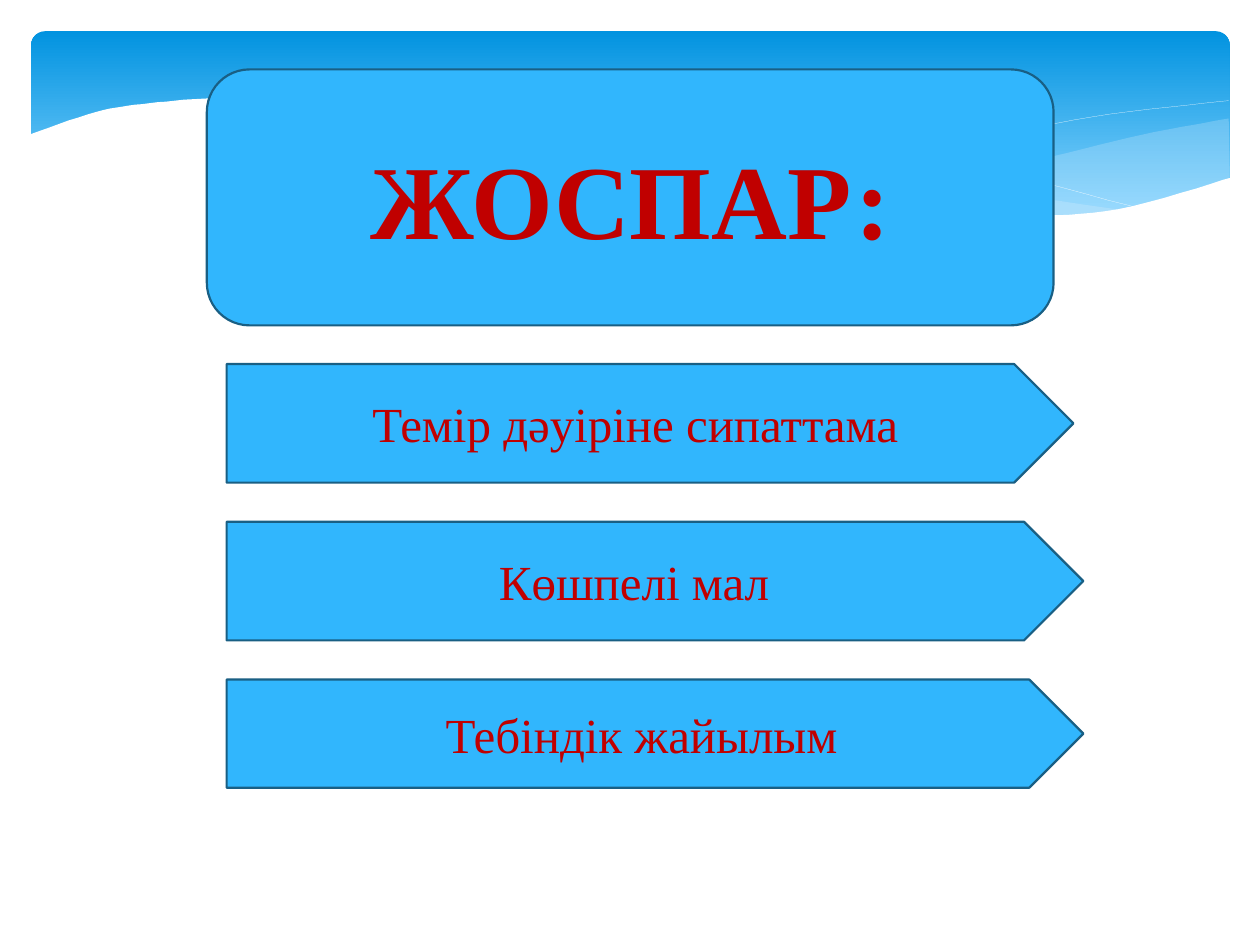
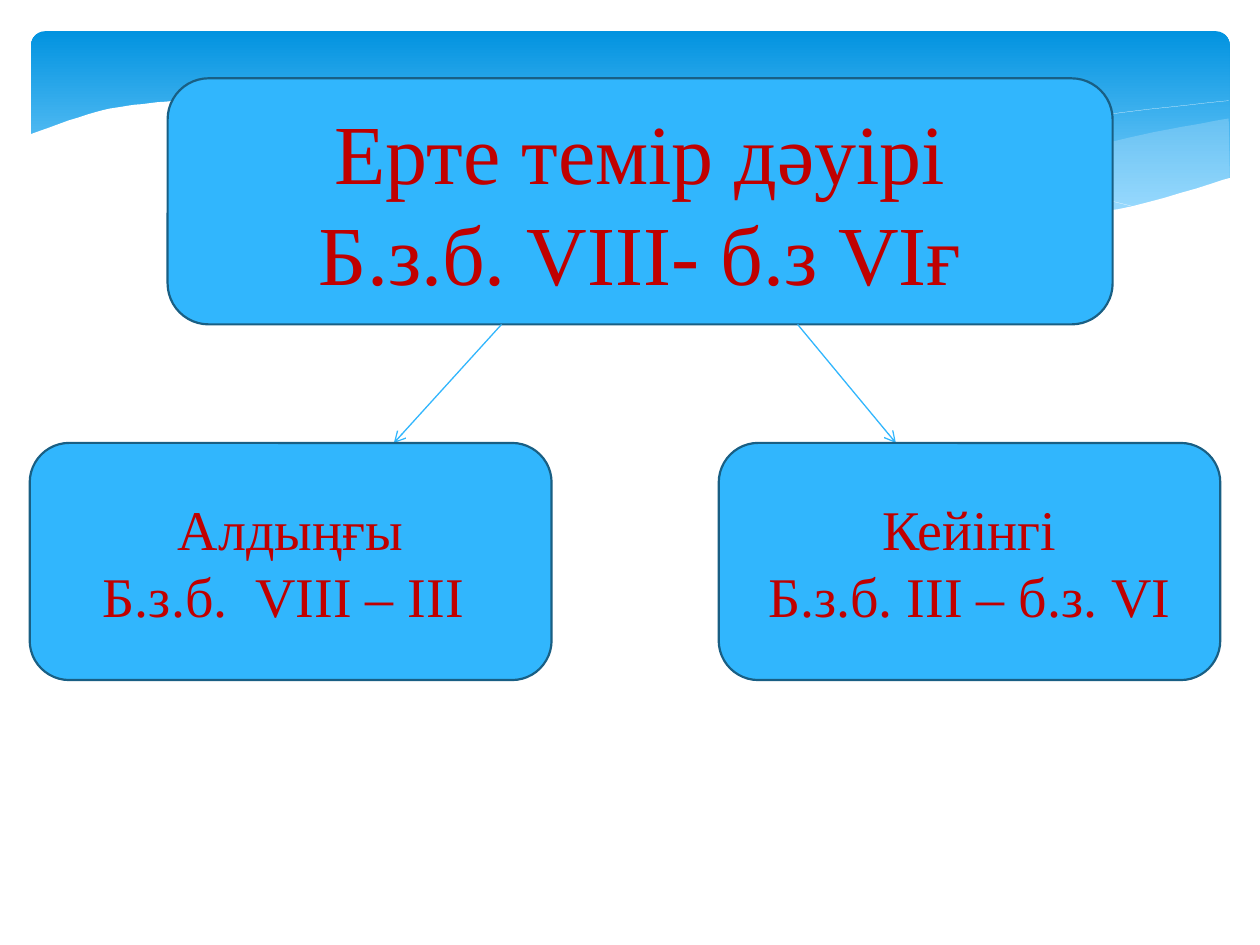
import dataclasses
import typing

import pptx
import pptx.dml.color
import pptx.enum.shapes
import pptx.enum.text
import pptx.oxml.ns
import pptx.util
from lxml import etree

Cm = pptx.util.Cm
Pt = pptx.util.Pt
Shape = pptx.enum.shapes.MSO_SHAPE


@dataclasses.dataclass(frozen=True)
class Theme:
    font: str = "Times New Roman"
    text: str = "C00000"
    box: str = "31B6FD"
    outline: str = "195F84"
    band_top: str = "0293E0"
    band_bottom: str = "83D3FE"
    wave: str = "C6E7FC"
    paper: str = "FFFFFF"
    plan_title_size: int = 60
    era_title_size: int = 48
    period_size: int = 32
    topic_size: int = 28
    outline_width: float = 1.25
    arrow_width: float = 0.75
    hairline_width: float = 0.1


class Box(typing.NamedTuple):
    """A place on the page, in centimetres."""
    left: float
    top: float
    width: float
    height: float


class Topic(typing.NamedTuple):
    text: str
    width: float
    height: float


class Period(typing.NamedTuple):
    lines: list
    left: float
    width: float
    arrow_start: float
    arrow_end: float


class Curve(typing.NamedTuple):
    """Smooth edges joined end to end; without a fill, a thin line is drawn."""
    edges: list
    fill: typing.Optional[str] = None
    opacity: int = 100


THEME = Theme()

# Page 1: the plan
PLAN_TITLE = ["ЖОСПАР:"]
PLAN_TITLE_BOX = Box(4.17, 1.4, 17.07, 5.16)
TOPICS = [
    Topic("Темір дәуіріне сипаттама", 17.07, 2.39),
    Topic("Көшпелі мал ", 17.27, 2.39),
    Topic("Тебіндік жайылым", 17.27, 2.18),
]
TOPIC_LEFT, TOPIC_TOP, TOPIC_PITCH = 4.57, 7.34, 3.18

# Page 2: the era and its two periods
ERA_TITLE = ["Ерте темір дәуірі", "Б.з.б. VIII- б.з VIғ"]
ERA_TITLE_BOX = Box(3.38, 1.58, 19.05, 4.96)
PERIODS = [
    Period(["Алдыңғы", "Б.з.б.  VIII – III "], 0.6, 10.52, 10.11, 7.94),
    Period(["Кейінгі", "Б.з.б. III – б.з. VI"], 14.49, 10.11, 16.08, 18.06),
]
PERIOD_TOP, PERIOD_HEIGHT = 8.93, 4.78

# Header of both pages: a gradient band, waves over it and a paper-coloured lower edge.
# Each edge is a row of knots that a smooth curve passes through.
BAND = Box(0.63, 0.63, 24.16, 3.96)
SHORT_WAVE_TOP = [(24.77, 2.39), (23.01, 2.72), (20.45, 3.33), (16.79, 4.06)]
SHORT_WAVE_BOTTOM = [
    (16.79, 4.06), (18.92, 4.27), (20.68, 4.37),
    (22.15, 4.29), (23.75, 3.96), (24.79, 3.58),
]
LONG_WAVE_TOP = [
    (22.68, 4.24), (19.69, 3.78), (15.98, 2.95),
    (12.75, 2.29), (9.65, 2.03), (7.26, 2.18),
]
LONG_WAVE_BOTTOM = [
    (7.26, 2.18), (9.19, 2.46), (11.4, 2.95), (15.27, 3.81),
    (18.69, 4.29), (20.5, 4.39), (22.68, 4.24),
]
FALLING_LINE = [
    (7.85, 2.29), (9.22, 2.11), (11.43, 2.08), (13.54, 2.24),
    (16.15, 2.62), (19.3, 3.25), (23.04, 4.22),
]
RISING_LINE = [(15.57, 3.84), (19, 2.97), (22, 2.36), (24.77, 2.03)]
PAPER_TOP = [
    (24.82, 3.58), (22.53, 4.22), (20.55, 4.34), (17.98, 4.19),
    (14.71, 3.66), (11.35, 2.9), (8.64, 2.34), (6.35, 2.06),
    (4.5, 1.98), (3.02, 2.08), (1.93, 2.26), (0.58, 2.72),
]
PAPER_BOTTOM = [(0.58, 5.69), (24.82, 5.69)]
HEADER_CURVES = [
    Curve([SHORT_WAVE_TOP, SHORT_WAVE_BOTTOM], THEME.wave, 29),
    Curve([LONG_WAVE_TOP, LONG_WAVE_BOTTOM], THEME.wave, 40),
    Curve([FALLING_LINE]),
    Curve([RISING_LINE]),
    Curve([PAPER_TOP, PAPER_BOTTOM], THEME.paper),
]
STEPS_PER_KNOT = 8
UNITS_PER_CM = 100  # freeform points are whole numbers, so draw in 0.01 cm


def rgb(code):
    return pptx.dml.color.RGBColor.from_string(code)


def add_child(parent, tag, **attributes):
    return etree.SubElement(parent, pptx.oxml.ns.qn(tag), attributes)


def smooth(knots):
    """Return points of a Catmull-Rom curve through the knots."""
    padded = [knots[0], *knots, knots[-1]]
    points = []
    for before, start, end, after in zip(padded, padded[1:], padded[2:], padded[3:]):
        for step in range(STEPS_PER_KNOT):
            t = step / STEPS_PER_KNOT
            points.append(tuple(
                b + ((c - a) * t + (2 * a - 5 * b + 4 * c - d) * t**2
                     + (3 * b - a - 3 * c + d) * t**3) / 2
                for a, b, c, d in zip(before, start, end, after)))
    return points + [knots[-1]]


def draw_band(page):
    band = page.shapes.add_shape(Shape.ROUNDED_RECTANGLE, *map(Cm, BAND))
    band.adjustments[0] = 0.07
    band.shadow.inherit = False
    band.line.fill.background()
    band.fill.gradient()
    band.fill.gradient_angle = 270
    colours = (THEME.band_top, THEME.band_bottom)
    for stop, colour, position in zip(band.fill.gradient_stops, colours, (0, 0.9)):
        stop.color.rgb = rgb(colour)
        stop.position = position
    return band


def draw_curve(page, curve):
    points = [(x * UNITS_PER_CM, y * UNITS_PER_CM)
              for edge in curve.edges for x, y in smooth(edge)]
    builder = page.shapes.build_freeform(*points[0], scale=Cm(1) / UNITS_PER_CM)
    builder.add_line_segments(points[1:], close=curve.fill is not None)
    shape = builder.convert_to_shape()
    shape.shadow.inherit = False
    if curve.fill is None:
        shape.fill.background()
        shape.line.color.rgb = rgb(THEME.paper)
        shape.line.width = Pt(THEME.hairline_width)
    else:
        shape.line.fill.background()
        shape.fill.solid()
        shape.fill.fore_color.rgb = rgb(curve.fill)
        colour = shape.element.spPr.find(".//" + pptx.oxml.ns.qn("a:srgbClr"))
        add_child(colour, "a:alpha", val=str(curve.opacity * 1000))
    return shape


def send_to_back(shapes, tree):
    """Put the shapes, in order, behind all others of a page's or layout's tree."""
    first_position = 2  # after the tree's own two property elements
    for position, shape in enumerate(shapes, first_position):
        tree.insert(position, shape.element)


def share_header(page, layout):
    """Draw the header on a page, then move it to the layout for all pages."""
    header = [draw_band(page)] + [draw_curve(page, curve) for curve in HEADER_CURVES]
    for number, shape in enumerate(header, 100):
        shape.element.nvSpPr.cNvPr.set("id", str(number))
    send_to_back(header, layout.shapes.element)


def write(shape, lines, size, bold=False):
    frame = shape.text_frame
    frame.word_wrap = True
    frame.auto_size = pptx.enum.text.MSO_AUTO_SIZE.NONE
    frame.vertical_anchor = pptx.enum.text.MSO_ANCHOR.MIDDLE
    frame.text = "\n".join(lines)
    for para in frame.paragraphs:
        para.alignment = pptx.enum.text.PP_ALIGN.CENTER
        para.font.name = THEME.font
        para.font.size = Pt(size)
        para.font.bold = bold
        para.font.color.rgb = rgb(THEME.text)


def add_box(page, kind, box):
    shape = page.shapes.add_shape(kind, *map(Cm, box))
    shape.shadow.inherit = False
    shape.fill.solid()
    shape.fill.fore_color.rgb = rgb(THEME.box)
    shape.line.color.rgb = rgb(THEME.outline)
    shape.line.width = Pt(THEME.outline_width)
    return shape


def add_title(page, lines, box, size, bold=False):
    """Lay the title placeholder over a rounded panel of the same size."""
    panel = add_box(page, Shape.FLOWCHART_ALTERNATE_PROCESS, box)
    send_to_back([panel], page.shapes.element)
    title = page.shapes.title
    title.left, title.top, title.width, title.height = map(Cm, box)
    write(title, lines, size, bold)


def add_arrow(page, start, end):
    straight = pptx.enum.shapes.MSO_CONNECTOR.STRAIGHT
    arrow = page.shapes.add_connector(straight, *map(Cm, start + end))
    arrow.line.color.rgb = rgb(THEME.box)
    arrow.line.width = Pt(THEME.arrow_width)
    properties = arrow.element.spPr
    add_child(properties.find(pptx.oxml.ns.qn("a:ln")), "a:tailEnd", type="arrow")
    add_child(properties, "a:effectLst")


def fill_plan(page):
    add_title(page, PLAN_TITLE, PLAN_TITLE_BOX, THEME.plan_title_size, bold=True)
    for row, topic in enumerate(TOPICS):
        top = TOPIC_TOP + row * TOPIC_PITCH
        box = Box(TOPIC_LEFT, top, topic.width, topic.height)
        write(add_box(page, Shape.PENTAGON, box), [topic.text], THEME.topic_size)


def fill_era(page):
    add_title(page, ERA_TITLE, ERA_TITLE_BOX, THEME.era_title_size)
    title_bottom = ERA_TITLE_BOX.top + ERA_TITLE_BOX.height
    for period in PERIODS:
        add_arrow(page, (period.arrow_start, title_bottom), (period.arrow_end, PERIOD_TOP))
        box = Box(period.left, PERIOD_TOP, period.width, PERIOD_HEIGHT)
        shape = add_box(page, Shape.ROUNDED_RECTANGLE, box)
        write(shape, period.lines, THEME.period_size)


def main():
    deck = pptx.Presentation()
    deck.slide_width, deck.slide_height = Cm(25.4), Cm(19.05)
    layout = deck.slide_layouts.get_by_name("Title Only")
    plan, era = (deck.slides.add_slide(layout) for _ in range(2))
    share_header(plan, layout)
    fill_plan(plan)
    fill_era(era)
    deck.save("out.pptx")


if __name__ == "__main__":
    main()
